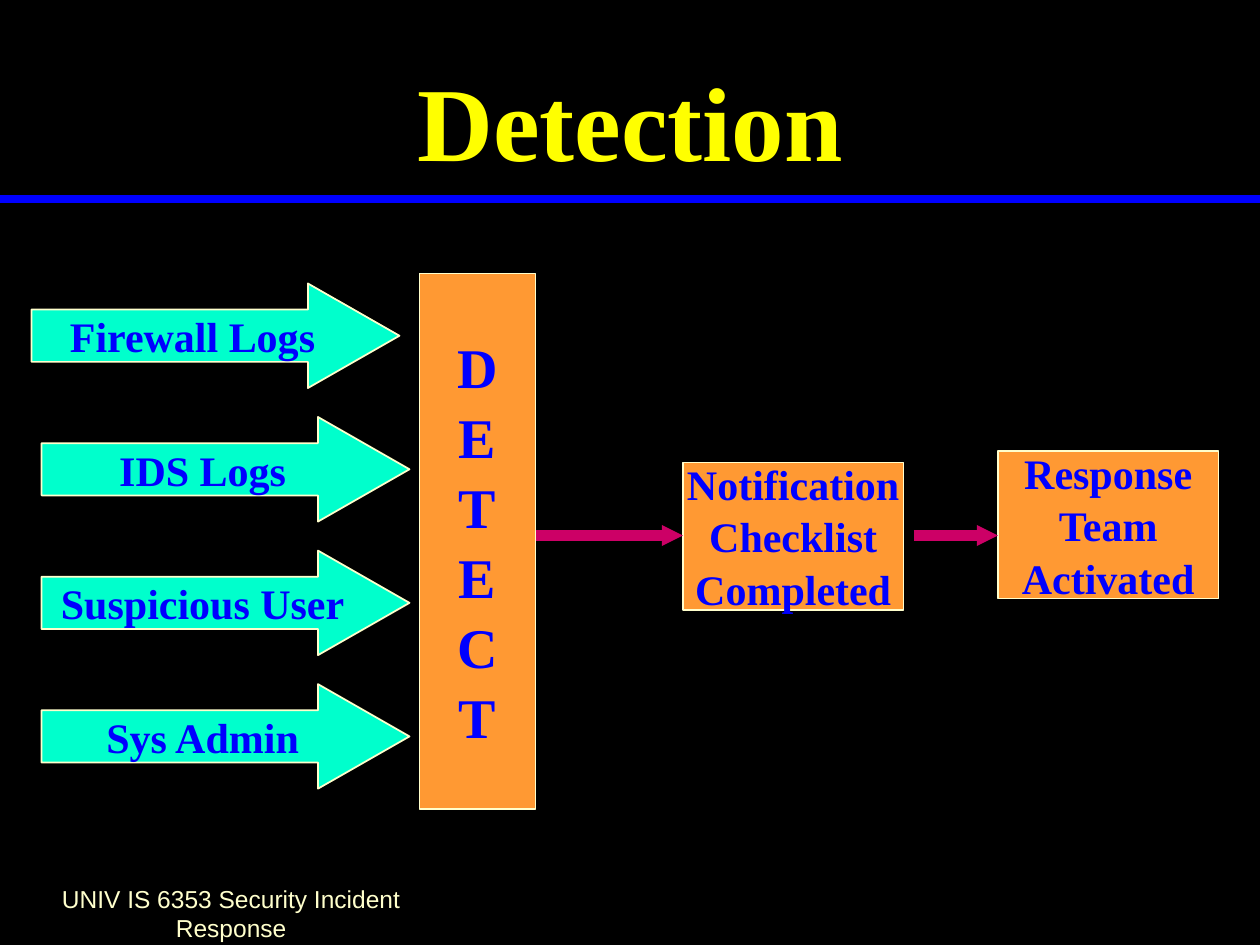
from dataclasses import dataclass
from lxml.etree import SubElement
from pptx import Presentation
from pptx.dml.color import RGBColor as Color
from pptx.enum.shapes import MSO_CONNECTOR as Connector, MSO_SHAPE as Shape
from pptx.enum.text import MSO_ANCHOR as Anchor, PP_ALIGN as Align
from pptx.oxml.ns import qn
from pptx.util import Inches, Pt


@dataclass(frozen=True)
class Theme:
    background: str = "000000"
    title: str = "FFFF00"
    rule: str = "0000FF"
    text: str = "0000FF"
    source: str = "00FFCC"
    step: str = "FF9933"
    outline: str = "FFFFCC"
    flow: str = "CC0066"
    serif: str = "Times New Roman"
    sans: str = "Arial"
    title_size: int = 60
    detect_size: int = 32
    label_size: int = 24
    footer_size: int = 14


THEME = Theme()
TITLE = "Detection"
FOOTER = "UNIV IS 6353 Security Incident Response"
SOURCES = [
    ("Firewall Logs", 0.25),
    ("IDS Logs", 0.33),
    ("Suspicious User", 0.33),
    ("Sys Admin", 0.33),
]
SOURCE_TOP, SOURCE_PITCH, SOURCE_SIZE = 2.25, 1.06, (2.92, 0.83)
STEPS = [
    ("\n".join("DETECT"), (3.33, 2.17, 0.92, 4.25), THEME.detect_size),
    ("Notification\nChecklist\nCompleted", (5.42, 3.67, 1.75, 1.17), THEME.label_size),
    ("Response\nTeam\nActivated", (7.92, 3.58, 1.75, 1.17), THEME.label_size),
]
FLOW_Y = 4.25
FLOWS = [(4.25, 5.42), (7.25, 7.92)]


def write(shape, text, size, color, font=THEME.serif, bold=True, anchor=Anchor.MIDDLE, wrap=False):
    frame = shape.text_frame
    frame.text = text
    frame.word_wrap = wrap
    frame.vertical_anchor = anchor
    for index, para in enumerate(frame.paragraphs):
        para.alignment = Align.CENTER
        para.space_before = Pt(size * 0.05 if index else 0)
        for span in para.runs:
            span.font.name = font
            span.font.size = Pt(size)
            span.font.bold = bold
            span.font.color.rgb = Color.from_string(color)


def add_block(page, kind, place, fill, text, size):
    block = page.shapes.add_shape(kind, *map(Inches, place))
    block.shadow.inherit = False
    block.fill.solid()
    block.fill.fore_color.rgb = Color.from_string(fill)
    block.line.color.rgb = Color.from_string(THEME.outline)
    block.line.width = Pt(1)
    write(block, text, size, THEME.text)
    return block


def add_line(page, left, right, y, color, width, arrow=False):
    line = page.shapes.add_connector(Connector.STRAIGHT, *map(Inches, (left, y, right, y)))
    line.line.color.rgb = Color.from_string(color)
    line.line.width = Pt(width)
    if arrow:
        SubElement(line.line._get_or_add_ln(), qn("a:tailEnd"), type="triangle", w="sm", len="sm")
    SubElement(line._element.spPr, qn("a:effectLst"))


deck = Presentation()
deck.slide_width, deck.slide_height = Inches(10), Inches(7.5)
page = deck.slides.add_slide(deck.slide_layouts[5])
page.background.fill.solid()
page.background.fill.fore_color.rgb = Color.from_string(THEME.background)

add_line(page, 0, 10, 1.58, THEME.rule, 4.5)

footer = page.shapes.add_textbox(*map(Inches, (0.25, 7, 3.17, 0.5)))
write(footer, FOOTER, THEME.footer_size, THEME.outline, THEME.sans, bold=False)

title = page.shapes.title
title.left, title.top, title.width, title.height = map(Inches, (0.75, 0.2, 8.5, 1.3))
write(title, TITLE, THEME.title_size, THEME.title, anchor=Anchor.BOTTOM, wrap=True)

for row, (label, left) in enumerate(SOURCES):
    place = (left, SOURCE_TOP + row * SOURCE_PITCH, *SOURCE_SIZE)
    arrow = add_block(page, Shape.RIGHT_ARROW, place, THEME.source, label, THEME.label_size)
    arrow.adjustments[0] = 0.5
    arrow.adjustments[1] = 0.875

for label, place, size in STEPS:
    add_block(page, Shape.RECTANGLE, place, THEME.step, label, size)

for start, end in FLOWS:
    add_line(page, start, end, FLOW_Y, THEME.flow, 6, arrow=True)

deck.save("out.pptx")
